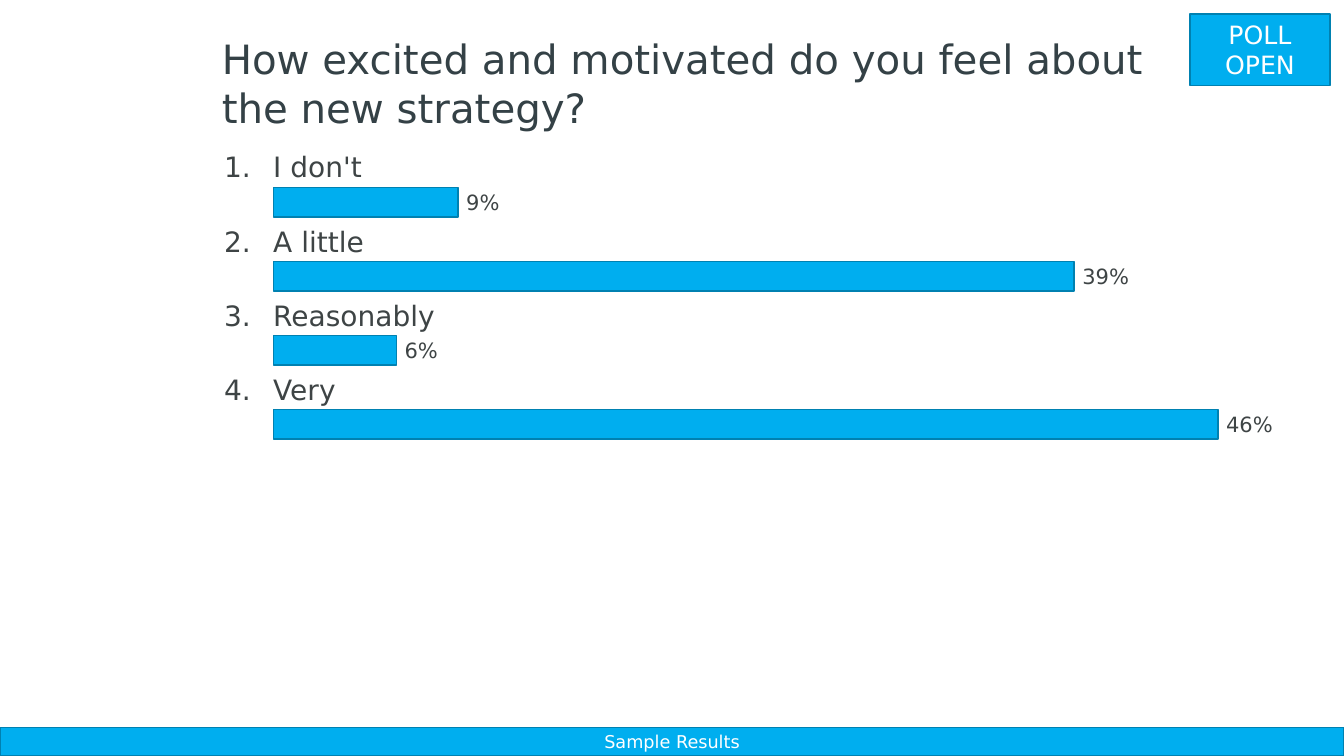
import pptx
import pptx.util
import pptx.dml.color
import pptx.enum.shapes
import pptx.enum.text

Pt = pptx.util.Pt
ALIGN = pptx.enum.text.PP_ALIGN
ANCHOR = pptx.enum.text.MSO_ANCHOR
FONT = "DejaVu Sans"
HUES = {"fill": "00AEEF", "edge": "0081B1", "title": "344146",
        "text": "3E4445", "white": "FFFFFF"}
WIDE, HIGH = 960, 540
POLL = [("I don't", 9), ("A little", 39), ("Reasonably", 6), ("Very", 46)]


def hue(name):
    return pptx.dml.color.RGBColor.from_string(HUES[name])


def write(shape, text, size, color, align=ALIGN.LEFT, anchor=ANCHOR.TOP,
          inset=(7.2, 3.6, 7.2, 3.6)):
    """Fill a shape with one styled paragraph; inset is left, top, right, bottom."""
    frame = shape.text_frame
    frame.text = text
    frame.word_wrap = True
    frame.vertical_anchor = anchor
    (frame.margin_left, frame.margin_top,
     frame.margin_right, frame.margin_bottom) = map(Pt, inset)
    para = frame.paragraphs[0]
    para.alignment = align
    font = para.runs[0].font
    font.name, font.size, font.color.rgb = FONT, Pt(size), hue(color)


def block(shapes, *box):
    """Add a blue rectangle with a darker edge."""
    rect = shapes.add_shape(pptx.enum.shapes.MSO_SHAPE.RECTANGLE, *map(Pt, box))
    rect.shadow.inherit = False
    rect.fill.solid()
    rect.fill.fore_color.rgb = hue("fill")
    rect.line.color.rgb = hue("edge")
    rect.line.width = Pt(1)
    return rect


def label(shapes, box, text, size, **style):
    write(shapes.add_textbox(*map(Pt, box)), text, size, "text", **style)


def head(slide, left, top, width, height):
    title = slide.shapes.title
    title.left, title.top, title.width, title.height = map(
        Pt, (left, top, width, height))
    write(title, "How excited and motivated do you feel about the new strategy?",
          28.8, "title", anchor=ANCHOR.MIDDLE)


def badge(slide, *box):
    write(block(slide.shapes, *box), "POLL OPEN", 18, "white",
          ALIGN.CENTER, ANCHOR.MIDDLE)


def foot(slide, *box):
    write(block(slide.shapes, *box), "Sample Results", 12.6, "white",
          ALIGN.CENTER, ANCHOR.MIDDLE)


def chart(slide, left, top, width, step):
    """Stack the numbered answers, each above its bar and share."""
    gap, unit = 44, 14.67
    start = left + gap
    for index, (answer, share) in enumerate(POLL):
        row = top + index * step
        span = share * unit
        parts = slide.shapes.add_group_shape().shapes
        label(parts, (left, row, gap, 28), f"{index + 1}.", 20,
              align=ALIGN.RIGHT, inset=(0, 4.3, 16, 0))
        label(parts, (start, row, width - gap, 30), answer, 20,
              inset=(0, 4.3, 0, 2.2))
        label(parts, (start + span, row + 32.6, 42, 18), f"{share}%", 15,
              inset=(5.8, 0, 0, 0))
        block(parts, start, row + 31.2, span, 21)


def main():
    deck = pptx.Presentation()
    deck.slide_width, deck.slide_height = Pt(WIDE), Pt(HIGH)
    slide = deck.slides.add_slide(deck.slide_layouts[5])
    foot(slide, 0, HIGH - 20.2, WIDE, 20.2)
    head(slide, 151.2, 21, 685.5, 76.3)
    badge(slide, 850, 10, 100, 51)
    chart(slide, 151.2, 102.8, 770, 52.9)
    deck.save("out.pptx")


if __name__ == "__main__":
    main()
